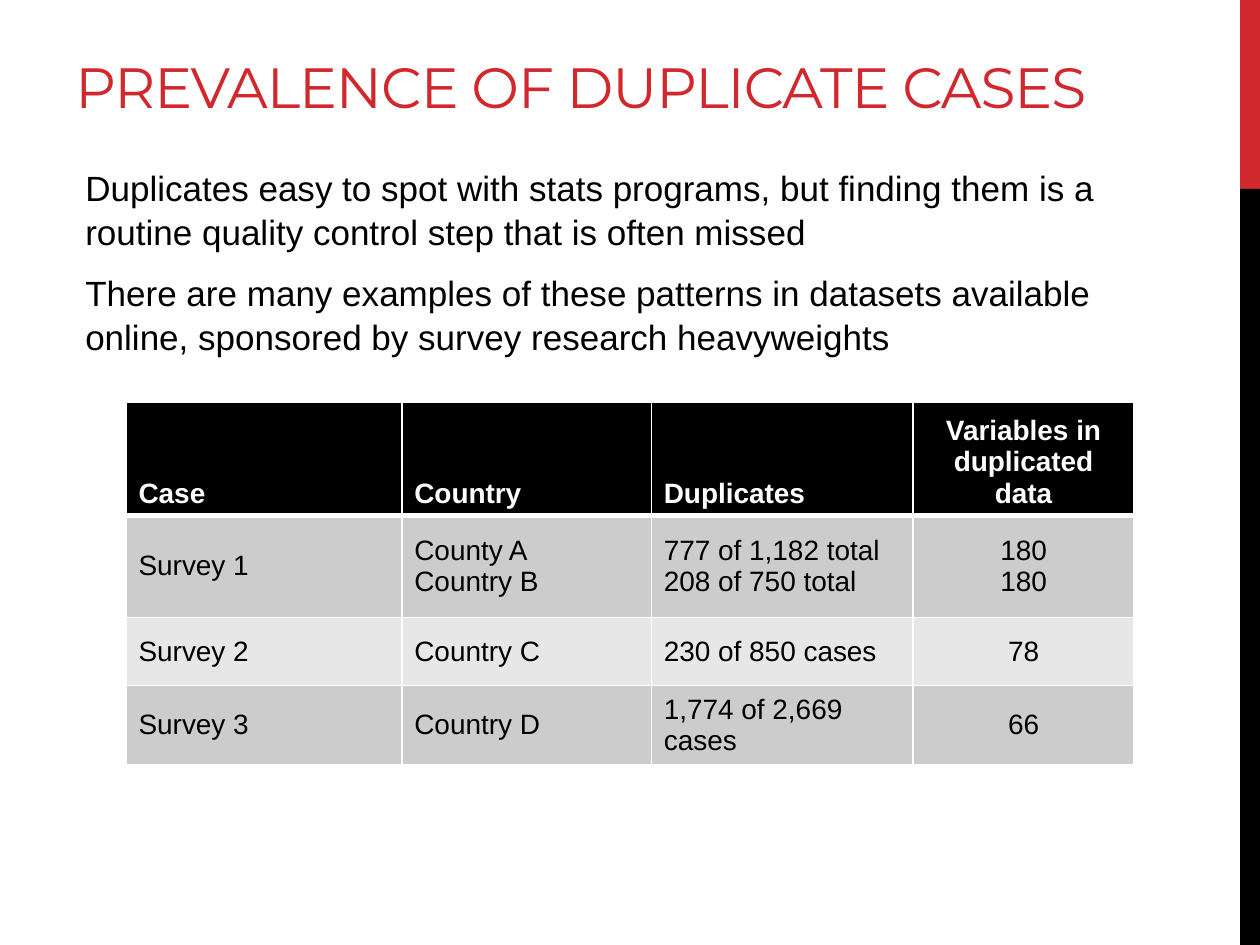
from dataclasses import dataclass

from lxml import etree
from pptx import Presentation
from pptx import util as u
from pptx.dml.color import RGBColor
from pptx.enum import shapes, text
from pptx.oxml.ns import qn


@dataclass(frozen=True)
class Theme:
    red: str = "D1282E"
    black: str = "000000"
    white: str = "FFFFFF"
    bands: tuple = ("CCCCCC", "E7E7E7")
    title_font: str = "Montserrat"
    body_font: str = "Arial"
    title_size: float = 32.4
    body_size: float = 20
    table_size: float = 16


THEME = Theme()

POINTS = (
    "Duplicates easy to spot with stats programs, but finding them is a "
    "routine quality control step that is often missed",
    "There are many examples of these patterns in datasets available "
    "online, sponsored by survey research heavyweights",
)
SURVEYS = (
    ("Case", "Country", "Duplicates", "Variables in duplicated data"),
    ("Survey 1", "County A\nCountry B", "777 of 1,182 total\n208 of 750 total", "180\n180"),
    ("Survey 2", "Country C", "230 of 850 cases", "78"),
    ("Survey 3", "Country D", "1,774 of 2,669 cases", "66"),
)
COLUMN_WIDTHS = (5.56, 5.03, 5.28, 4.45)
ROW_HEIGHTS = (2.06, 2.06, 1.37, 1.19)


def rgb(color):
    return RGBColor.from_string(color)


def format_runs(frame, font, size, color, bold=False):
    for paragraph in frame.paragraphs:
        for run in paragraph.runs:
            run.font.name = font
            run.font.size = u.Pt(size)
            run.font.color.rgb = rgb(color)
            run.font.bold = bold


def add_band(slide, top, height, color):
    """Add one part of the stripe along the right edge."""
    band = slide.shapes.add_shape(
        shapes.MSO_SHAPE.RECTANGLE, u.Cm(25), u.Cm(top), u.Cm(0.4), u.Cm(height))
    band.shadow.inherit = False
    band.fill.solid()
    band.fill.fore_color.rgb = rgb(color)
    band.line.fill.background()


def add_text(slide, content, left, top, width, height):
    box = slide.shapes.add_textbox(u.Cm(left), u.Cm(top), u.Cm(width), u.Cm(height))
    frame = box.text_frame
    frame.word_wrap = True
    frame.text = content
    return frame


def add_title(slide):
    title = add_text(slide, "PREVALENCE OF DUPLICATE CASES", 1.27, 0.43, 22.86, 2.11)
    title.vertical_anchor = text.MSO_ANCHOR.BOTTOM
    format_runs(title, THEME.title_font, THEME.title_size, THEME.red)
    title.paragraphs[0].runs[0].font._element.set("spc", "-60")


def add_points(slide):
    points = add_text(slide, "\n".join(POINTS), 1.47, 3.18, 22.86, 12.57)
    format_runs(points, THEME.body_font, THEME.body_size, THEME.black)
    for point in points.paragraphs:
        point.line_spacing = 1.05
        point.space_before = u.Pt(4)
        point.space_after = u.Pt(6)


def set_borders(cell, top, bottom):
    """Draw white borders; top and bottom are widths in points."""
    properties = cell._tc.get_or_add_tcPr()
    sides = (("a:lnL", 1), ("a:lnR", 1), ("a:lnT", top), ("a:lnB", bottom))
    for place, (side, width) in enumerate(sides):
        border = etree.Element(qn(side), w=str(u.Pt(width)))
        fill = etree.SubElement(border, qn("a:solidFill"))
        etree.SubElement(fill, qn("a:srgbClr"), val=THEME.white)
        properties.insert(place, border)


def fill_cell(cell, content, row, centred):
    header = row == 0
    cell.text_frame.text = content
    cell.vertical_anchor = text.MSO_ANCHOR.BOTTOM if header else text.MSO_ANCHOR.MIDDLE
    format_runs(cell.text_frame, THEME.body_font, THEME.table_size,
                THEME.white if header else THEME.black, header)
    if centred:
        for paragraph in cell.text_frame.paragraphs:
            paragraph.alignment = text.PP_ALIGN.CENTER
    cell.fill.solid()
    cell.fill.fore_color.rgb = rgb(THEME.black if header else THEME.bands[(row - 1) % 2])
    set_borders(cell, top=3 if row == 1 else 1, bottom=3 if header else 1)


def add_survey_table(slide):
    table = slide.shapes.add_table(
        len(SURVEYS), len(COLUMN_WIDTHS), u.Cm(2.54), u.Cm(8.1),
        u.Cm(sum(COLUMN_WIDTHS)), u.Cm(sum(ROW_HEIGHTS))).table
    for column, width in zip(table.columns, COLUMN_WIDTHS):
        column.width = u.Cm(width)
    for row, (entries, height) in enumerate(zip(SURVEYS, ROW_HEIGHTS)):
        table.rows[row].height = u.Cm(height)
        for column, content in enumerate(entries):
            fill_cell(table.cell(row, column), content, row,
                      centred=column == len(entries) - 1)


def main():
    deck = Presentation()
    deck.slide_width, deck.slide_height = u.Cm(25.4), u.Cm(19.05)
    slide = deck.slides.add_slide(deck.slide_layouts[6])
    add_band(slide, 0, 3.81, THEME.red)
    add_band(slide, 3.81, 15.24, THEME.black)
    add_title(slide)
    add_points(slide)
    add_survey_table(slide)
    deck.save("out.pptx")


if __name__ == "__main__":
    main()
